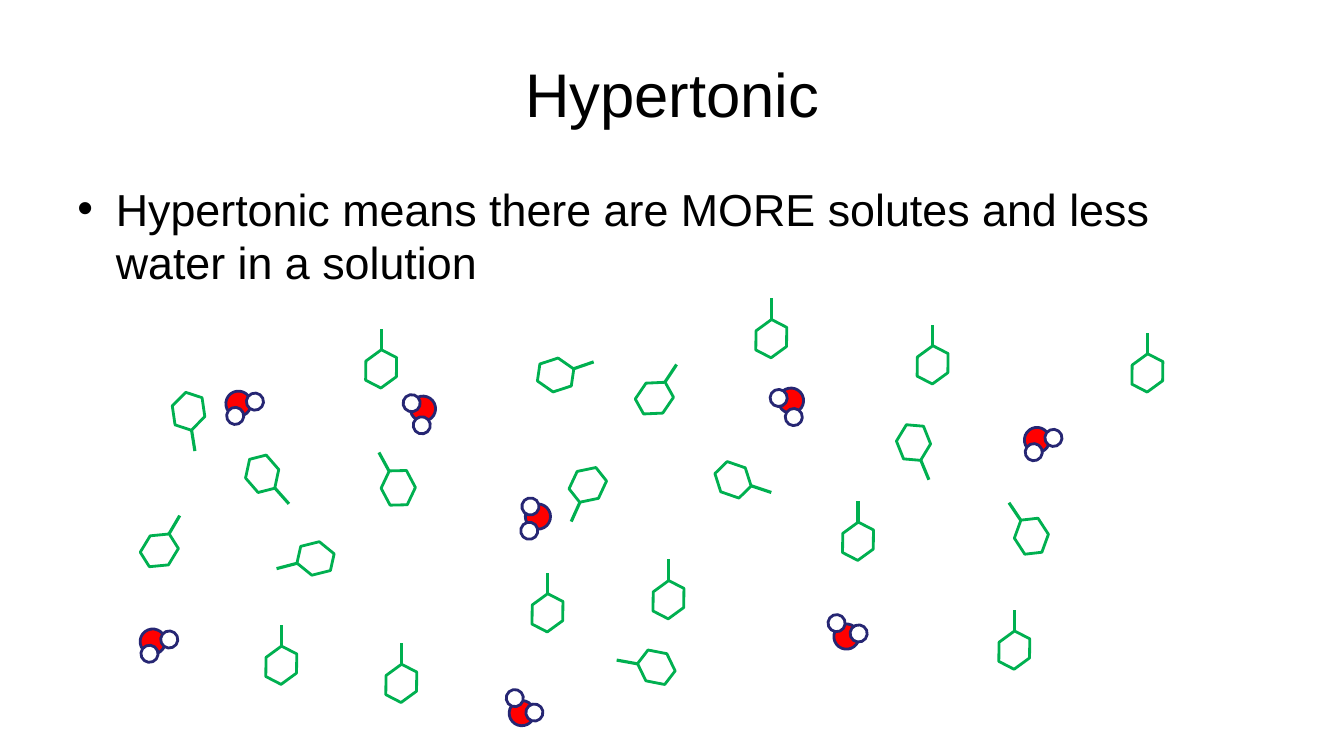
from math import cos, radians, sin

from lxml import etree
from pptx import Presentation
from pptx.dml.color import RGBColor
from pptx.enum.shapes import MSO_CONNECTOR, MSO_SHAPE
from pptx.enum.text import MSO_ANCHOR, PP_ALIGN
from pptx.oxml.ns import qn
from pptx.util import Inches, Pt

OVAL = MSO_SHAPE.OVAL
HEXAGON = MSO_SHAPE.HEXAGON
STRAIGHT = MSO_CONNECTOR.STRAIGHT
MIDDLE = MSO_ANCHOR.MIDDLE
CENTER = PP_ALIGN.CENTER

BLACK, WHITE, RED, NAVY, GREEN = "000000", "FFFFFF", "FF0000", "262673", "00B050"


def color(hex_string):
    return RGBColor.from_string(hex_string)


def add_centered(group, kind, x, y, size, rotation, fill, line):
    """Add a square-framed shape whose centre is at x, y."""
    shape = group.shapes.add_shape(kind, Inches(x - size / 2), Inches(y - size / 2),
                                   Inches(size), Inches(size))
    shape.rotation = rotation
    shape.shadow.inherit = False
    shape.fill.solid()
    shape.fill.fore_color.rgb = color(fill)
    shape.line.color.rgb = color(line)
    shape.line.width = Pt(2)


deck = Presentation()
deck.slide_width = Inches(13.33)
deck.slide_height = Inches(7.5)
page = deck.slides.add_slide(deck.slide_layouts[6])

# Title and bullet
texts = [
    ("Hypertonic", 0.3, 1.25, 44),
    ("Hypertonic means there are MORE solutes and less water in a solution", 1.75, 4.95, 32),
]
paragraphs = []
for text, top, height, size in texts:
    box = page.shapes.add_textbox(Inches(0.67), Inches(top), Inches(12), Inches(height))
    box.text_frame.word_wrap = True
    para = box.text_frame.paragraphs[0]
    para.text = text
    para.font.name = "Arial"
    para.font.size = Pt(size)
    para.font.color.rgb = color(BLACK)
    paragraphs.append(para)
    if top < 1:
        box.text_frame.vertical_anchor = MIDDLE

title, bullet = paragraphs
title.alignment = CENTER
bullet.space_before = Pt(4)
properties = bullet._p.get_or_add_pPr()
properties.set("marL", str(Inches(0.38)))
properties.set("indent", str(Inches(-0.38)))
etree.SubElement(properties, qn("a:buFont")).set("typeface", "Arial")
etree.SubElement(properties, qn("a:buChar")).set("char", "•")

# Water molecules: centre of the oxygen and rotation
waters = [
    (1.515, 6.365, 306.7), (2.365, 4.005, 306.7), (8.395, 6.315, 187.8),
    (10.285, 4.365, 306.7), (7.845, 3.975, 34.2), (4.195, 4.055, 48.2),
    (5.175, 7.075, 199.1), (5.335, 5.125, 75.4),
]
hydrogens = [(158, 0.125), (46, 0.165)]  # angle and distance from the oxygen
for x, y, rotation in waters:
    molecule = page.shapes.add_group_shape()
    add_centered(molecule, OVAL, x, y, 0.25, rotation, RED, NAVY)
    for angle, distance in hydrogens:
        turn = radians(angle + rotation)
        add_centered(molecule, OVAL, x + distance * cos(turn), y + distance * sin(turn),
                     0.17, rotation, WHITE, NAVY)

# Solute molecules: centre of the ring and rotation
UPRIGHT = 27.3  # ring rotation at which the tail points straight up
solutes = [
    (7.27, 4.76, 135.6), (3.78, 3.66, UPRIGHT), (3.98, 6.78, UPRIGHT),
    (3.13, 5.54, 282.6), (11.38, 3.7, UPRIGHT), (10.06, 6.45, UPRIGHT),
    (6.63, 5.95, UPRIGHT), (1.58, 5.46, 57.8), (7.65, 3.36, UPRIGHT),
    (10.23, 5.32, 353.5), (2.6, 4.7, 165.6), (5.51, 3.72, 98.4),
    (9.25, 3.62, UPRIGHT), (1.87, 4.08, 198.2), (3.95, 4.84, 358.7),
    (5.43, 6.08, UPRIGHT), (5.83, 4.81, 231.6), (9.06, 4.39, 184.8),
    (2.79, 6.6, UPRIGHT), (8.51, 5.37, UPRIGHT), (6.51, 6.62, 307.6),
    (6.49, 3.95, 60.8),
]
for x, y, rotation in solutes:
    molecule = page.shapes.add_group_shape()
    add_centered(molecule, HEXAGON, x, y, 0.34, rotation, WHITE, GREEN)
    turn = radians(rotation - UPRIGHT)
    across, down = sin(turn), -cos(turn)
    tail = molecule.shapes.add_connector(
        STRAIGHT, Inches(x + 0.19 * across), Inches(y + 0.19 * down),
        Inches(x + 0.4 * across), Inches(y + 0.4 * down))
    tail.line.color.rgb = color(GREEN)
    tail.line.width = Pt(2.25)
    etree.SubElement(tail._element.spPr, qn("a:effectLst"))

deck.save("out.pptx")
